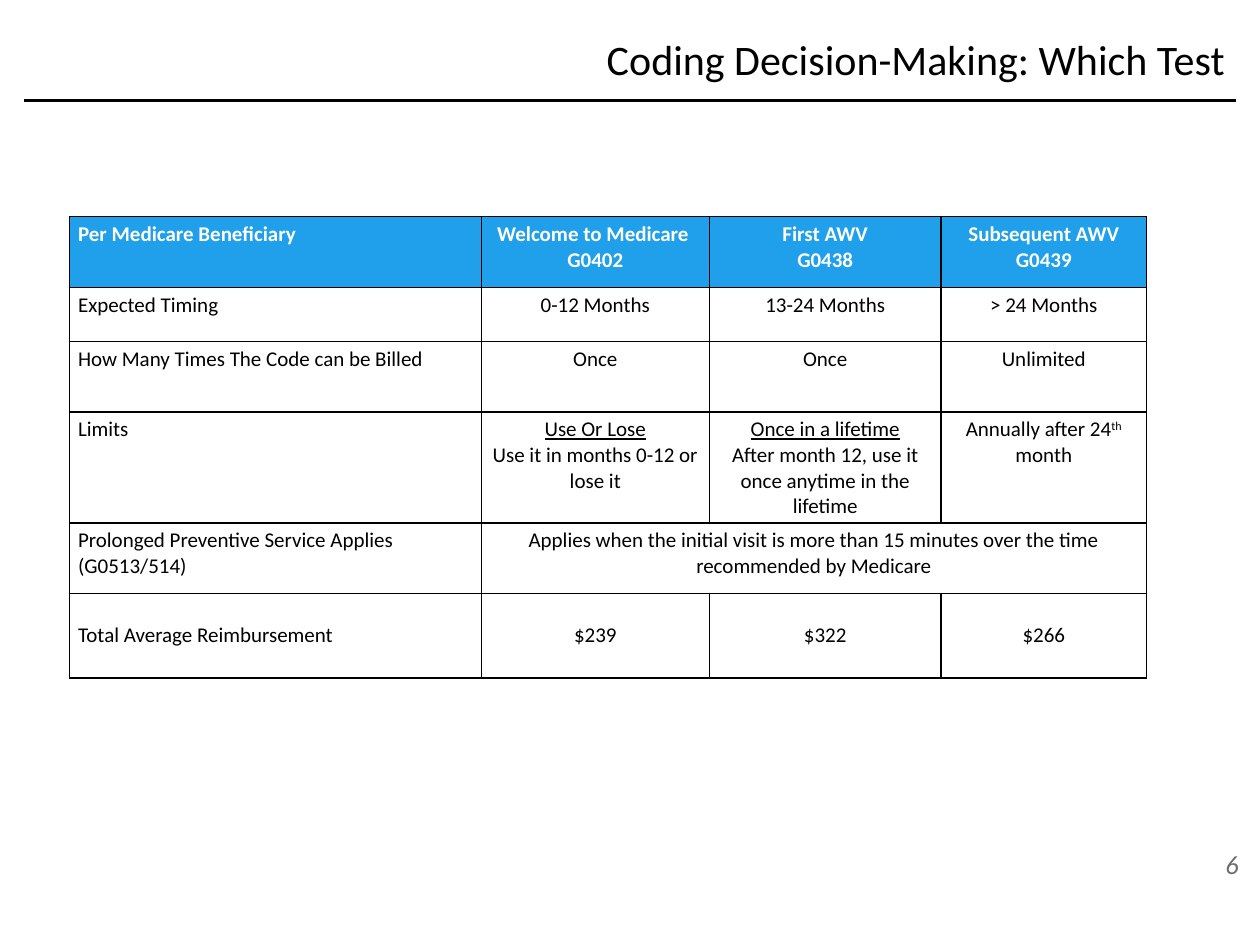
import pptx
import pptx.dml.color
import pptx.enum.shapes
import pptx.enum.text
import pptx.oxml
import pptx.oxml.ns
import pptx.util

Inches = pptx.util.Inches
Pt = pptx.util.Pt
ALIGN = pptx.enum.text.PP_ALIGN
ANCHOR = pptx.enum.text.MSO_ANCHOR

COLORS = {"black": "000000", "white": "FFFFFF", "gray": "6D6D6C", "header": "209FEA"}
COLUMN_WIDTHS = [3.27, 1.81, 1.84, 1.63]
ROW_HEIGHTS = [0.56, 0.43, 0.56, 0.87, 0.56, 0.67]
ROWS = [
    ["Per Medicare Beneficiary", "Welcome to Medicare \nG0402", "First AWV\nG0438", "Subsequent AWV\nG0439"],
    ["Expected Timing", "0-12 Months", "13-24 Months", "> 24 Months"],
    ["How Many Times The Code can be Billed", "Once", "Once", "Unlimited"],
    [
        "Limits",
        "Use Or Lose\nUse it in months 0-12 or lose it",
        "Once in a lifetime\nAfter month 12, use it once anytime in the lifetime",
        "Annually after 24",
    ],
    [
        "Prolonged Preventive Service Applies (G0513/514)",
        "Applies when the initial visit is more than 15 minutes over the time recommended by Medicare",
        "",
        "",
    ],
    ["Total Average Reimbursement", "$239", "$322", "$266"],
]
LIMITS_ROW, PROLONGED_ROW, TOTAL_ROW = 3, 4, 5


class SlideBuilder:
    font_name = "Calibri"
    margins = (0.07, 0.04)

    def __init__(self, slide):
        self.slide = slide

    def color(self, name):
        return pptx.dml.color.RGBColor.from_string(COLORS[name])

    def format(self, paragraph, size, color, align, bold=False, italic=False):
        paragraph.alignment = align
        for run in paragraph.runs:
            run.font.name = self.font_name
            run.font.size = Pt(size)
            run.font.bold = bold
            run.font.italic = italic
            run.font.color.rgb = self.color(color)

    def set_margins(self, target):
        horizontal, vertical = self.margins
        target.margin_left = target.margin_right = Inches(horizontal)
        target.margin_top = target.margin_bottom = Inches(vertical)

    def text(self, text, left, top, width, height, size, color, italic=False, tight=False, anchor=ANCHOR.TOP):
        shape = self.slide.shapes.add_textbox(Inches(left), Inches(top), Inches(width), Inches(height))
        frame = shape.text_frame
        frame.text = text
        frame.word_wrap = True
        frame.vertical_anchor = anchor
        if tight:
            self.set_margins(frame)
        self.format(frame.paragraphs[0], size, color, ALIGN.RIGHT, italic=italic)

    def line(self, left, top, right, bottom, width):
        connector = self.slide.shapes.add_connector(
            pptx.enum.shapes.MSO_CONNECTOR.STRAIGHT, Inches(left), Inches(top), Inches(right), Inches(bottom)
        )
        connector.line.color.rgb = self.color("black")
        connector.line.width = Pt(width)
        connector._element.spPr.append(pptx.oxml.parse_xml(f'<a:effectLst {pptx.oxml.ns.nsdecls("a")}/>'))

    def borders(self, cell, width):
        properties = cell._tc.get_or_add_tcPr()
        for side in ("lnL", "lnR", "lnT", "lnB"):
            properties.append(pptx.oxml.parse_xml(
                f'<a:{side} {pptx.oxml.ns.nsdecls("a")} w="{Pt(width)}"><a:solidFill>'
                f'<a:srgbClr val="{COLORS["black"]}"/></a:solidFill></a:{side}>'
            ))

    def table(self, left, top, rows, widths, heights):
        shape = self.slide.shapes.add_table(
            len(rows), len(widths), Inches(left), Inches(top), Inches(sum(widths)), Inches(sum(heights))
        )
        table = shape.table
        table.horz_banding = False
        for column, width in zip(table.columns, widths):
            column.width = Inches(width)
        for row, height in zip(table.rows, heights):
            row.height = Inches(height)
        for row_index, row in enumerate(rows):
            for column_index, text in enumerate(row):
                cell = table.cell(row_index, column_index)
                self.cell(cell, text, row_index == 0, ALIGN.CENTER if column_index else ALIGN.LEFT)
        return table

    def cell(self, cell, text, header, align):
        cell.text_frame.text = text
        self.set_margins(cell)
        self.borders(cell, 1)
        if header:
            cell.fill.solid()
            cell.fill.fore_color.rgb = self.color("header")
        else:
            cell.fill.background()
        for paragraph in cell.text_frame.paragraphs:
            self.format(paragraph, 12, "white" if header else "black", align, bold=header)

    def superscript(self, paragraph, raised, rest):
        for text in (raised, rest):
            paragraph.add_run().text = text
        self.format(paragraph, 12, "black", ALIGN.CENTER)
        paragraph.runs[-2]._r.get_or_add_rPr().set("baseline", "30000")


def main():
    presentation = pptx.Presentation()
    presentation.slide_width = Inches(10)
    presentation.slide_height = Inches(7.5)
    slide = presentation.slides.add_slide(presentation.slide_layouts[6])
    builder = SlideBuilder(slide)

    builder.text("6", 7.65, 6.66, 2.25, 0.4, 15, "gray", italic=True, tight=True, anchor=ANCHOR.MIDDLE)
    builder.line(0.19, 0.8, 9.81, 0.8, 1.5)
    builder.text("Coding Decision-Making: Which Test", 1.2, 0.22, 8.62, 0.5, 24, "black")

    table = builder.table(0.55, 1.72, ROWS, COLUMN_WIDTHS, ROW_HEIGHTS)
    for column in (1, 2):
        table.cell(LIMITS_ROW, column).text_frame.paragraphs[0].runs[0].font.underline = True
    builder.superscript(table.cell(LIMITS_ROW, 3).text_frame.paragraphs[0], "th", " month")
    table.cell(PROLONGED_ROW, 1).merge(table.cell(PROLONGED_ROW, 3))
    for cell in table.rows[TOTAL_ROW].cells:
        cell.vertical_anchor = ANCHOR.MIDDLE

    presentation.save("out.pptx")


if __name__ == "__main__":
    main()
